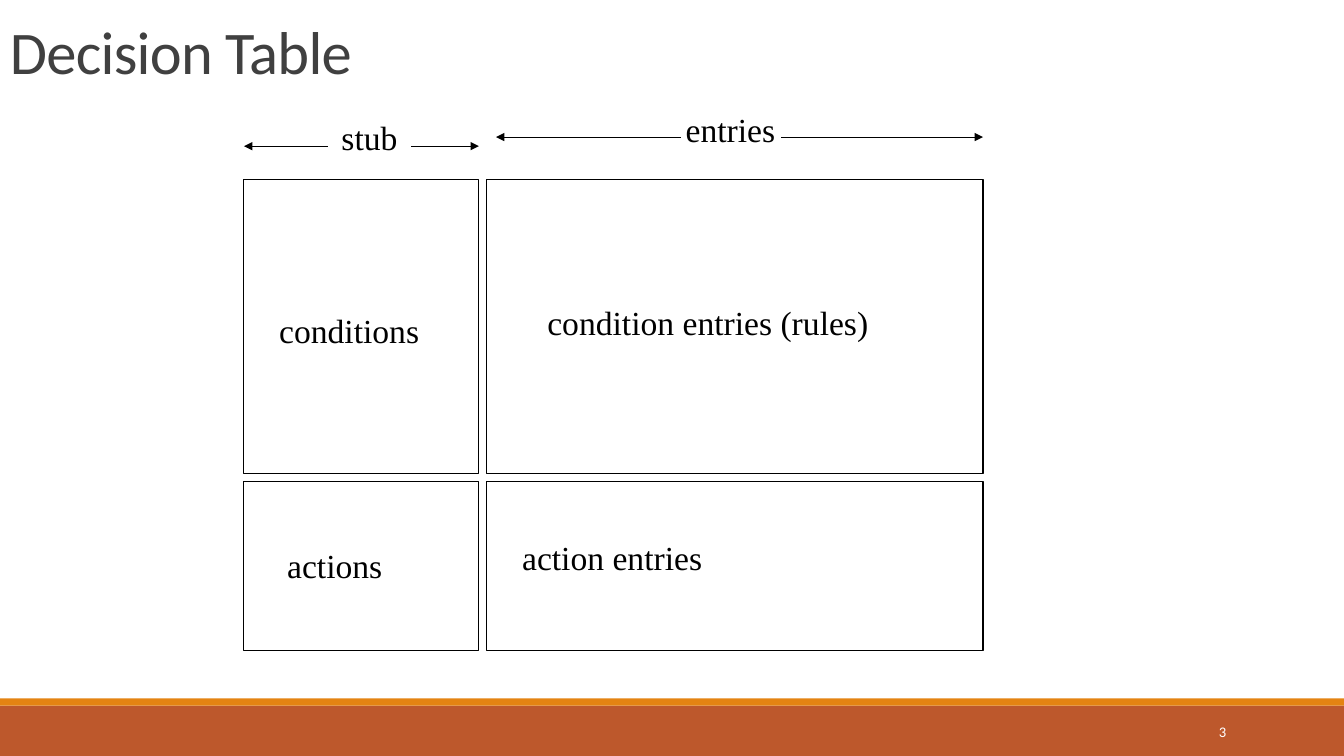
import pptx
import pptx.util
import pptx.dml.color
import pptx.enum.shapes
import pptx.enum.text
from dataclasses import dataclass
from lxml import etree
from pptx.oxml.ns import qn

TITLE = "Decision Table"
PAGE_NUMBER = "3"

# Grid of the decision table: (start, length) in inches
COLUMNS = [(2.42, 2.33), (4.83, 4.92)]
ROWS = [(1.78, 2.92), (4.78, 1.67)]

# text, column, row, offset inside the cell, width
CELL_LABELS = [
    ("conditions", 0, 0, (0.25, 1.25), 1.92),
    ("condition entries (rules)", 1, 0, (0.5, 1.17), 3.58),
    ("actions", 0, 1, (0.33, 0.58), 1.67),
    ("action entries", 1, 1, (0.25, 0.5), 3.58),
]
# text, label left, top, width, arrow height, arrow tips, gap edges
HEADINGS = [
    ("stub", 2.58, 1.11, 2.17, 1.45, (2.42, 4.75), (3.25, 4.08)),
    ("entries", 4.83, 1.03, 4.83, 1.36, (4.92, 9.75), (6.75, 7.75)),
]
LABEL_HEIGHT = 0.5


@dataclass(frozen=True)
class Theme:
    width: float = 13.33
    height: float = 7.5
    footer: str = "BD582C"
    stripe: str = "E48312"
    title: str = "404040"
    ink: str = "000000"
    light: str = "FFFFFF"
    heading_font: str = "Calibri"
    body_font: str = "Times New Roman"
    title_size: float = 43.2
    body_size: float = 24
    number_size: float = 10.5
    line: float = 0.75


THEME = Theme()
ALIGN = pptx.enum.text.PP_ALIGN
ANCHOR = pptx.enum.text.MSO_ANCHOR


def inches(*values):
    return [pptx.util.Inches(value) for value in values]


def color(value):
    return pptx.dml.color.RGBColor.from_string(value)


def add_text(page, text, left, top, width, height, *, font=THEME.body_font,
             size=THEME.body_size, ink=THEME.ink, align=ALIGN.LEFT,
             anchor=ANCHOR.TOP, line_spacing=None, tracking=None):
    box = page.shapes.add_textbox(*inches(left, top, width, height))
    frame = box.text_frame
    frame.word_wrap = True
    frame.vertical_anchor = anchor
    para = frame.paragraphs[0]
    para.alignment = align
    para.line_spacing = line_spacing
    span = para.add_run()
    span.text = text
    span.font.name = font
    span.font.size = pptx.util.Pt(size)
    span.font.color.rgb = color(ink)
    if tracking is not None:
        span.font._element.set("spc", str(round(tracking * 100)))


def add_rectangle(page, left, top, width, height, fill=None):
    """Draw a filled band, or an outlined cell when no fill is given."""
    shape = page.shapes.add_shape(pptx.enum.shapes.MSO_SHAPE.RECTANGLE,
                                  *inches(left, top, width, height))
    shape.shadow.inherit = False
    if fill:
        shape.fill.solid()
        shape.fill.fore_color.rgb = color(fill)
        shape.line.fill.background()
    else:
        shape.fill.background()
        shape.line.color.rgb = color(THEME.ink)
        shape.line.width = pptx.util.Pt(THEME.line)


def add_arrow(page, start, tip, height):
    arrow = page.shapes.add_connector(
        pptx.enum.shapes.MSO_CONNECTOR.STRAIGHT,
        *inches(start, height, tip, height))
    arrow.line.color.rgb = color(THEME.ink)
    arrow.line.width = pptx.util.Pt(THEME.line)
    etree.SubElement(arrow.line._get_or_add_ln(), qn("a:tailEnd"), type="triangle")
    etree.SubElement(arrow._element.spPr, qn("a:effectLst"))


def main():
    deck = pptx.Presentation()
    deck.slide_width, deck.slide_height = inches(THEME.width, THEME.height)
    page = deck.slides.add_slide(deck.slide_layouts[6])

    add_rectangle(page, 0, 7, THEME.width, 0.5, THEME.footer)
    add_rectangle(page, 0, 6.93, THEME.width, 0.07, THEME.stripe)
    add_text(page, PAGE_NUMBER, 10.83, 7.06, 1.43, 0.4, font=THEME.heading_font,
             size=THEME.number_size, ink=THEME.light, align=ALIGN.RIGHT,
             anchor=ANCHOR.MIDDLE)
    add_text(page, TITLE, 0, 0.15, 8.5, 0.76, font=THEME.heading_font,
             size=THEME.title_size, ink=THEME.title, anchor=ANCHOR.BOTTOM,
             line_spacing=0.85, tracking=-0.5)

    for left, width in COLUMNS:
        for top, height in ROWS:
            add_rectangle(page, left, top, width, height)

    for text, column, row, (across, down), width in CELL_LABELS:
        add_text(page, text, COLUMNS[column][0] + across, ROWS[row][0] + down,
                 width, LABEL_HEIGHT)

    for text, left, top, width, height, tips, gap in HEADINGS:
        add_text(page, text, left, top, width, LABEL_HEIGHT, align=ALIGN.CENTER)
        for start, tip in zip(gap, tips):
            add_arrow(page, start, tip, height)

    deck.save("out.pptx")


if __name__ == "__main__":
    main()
